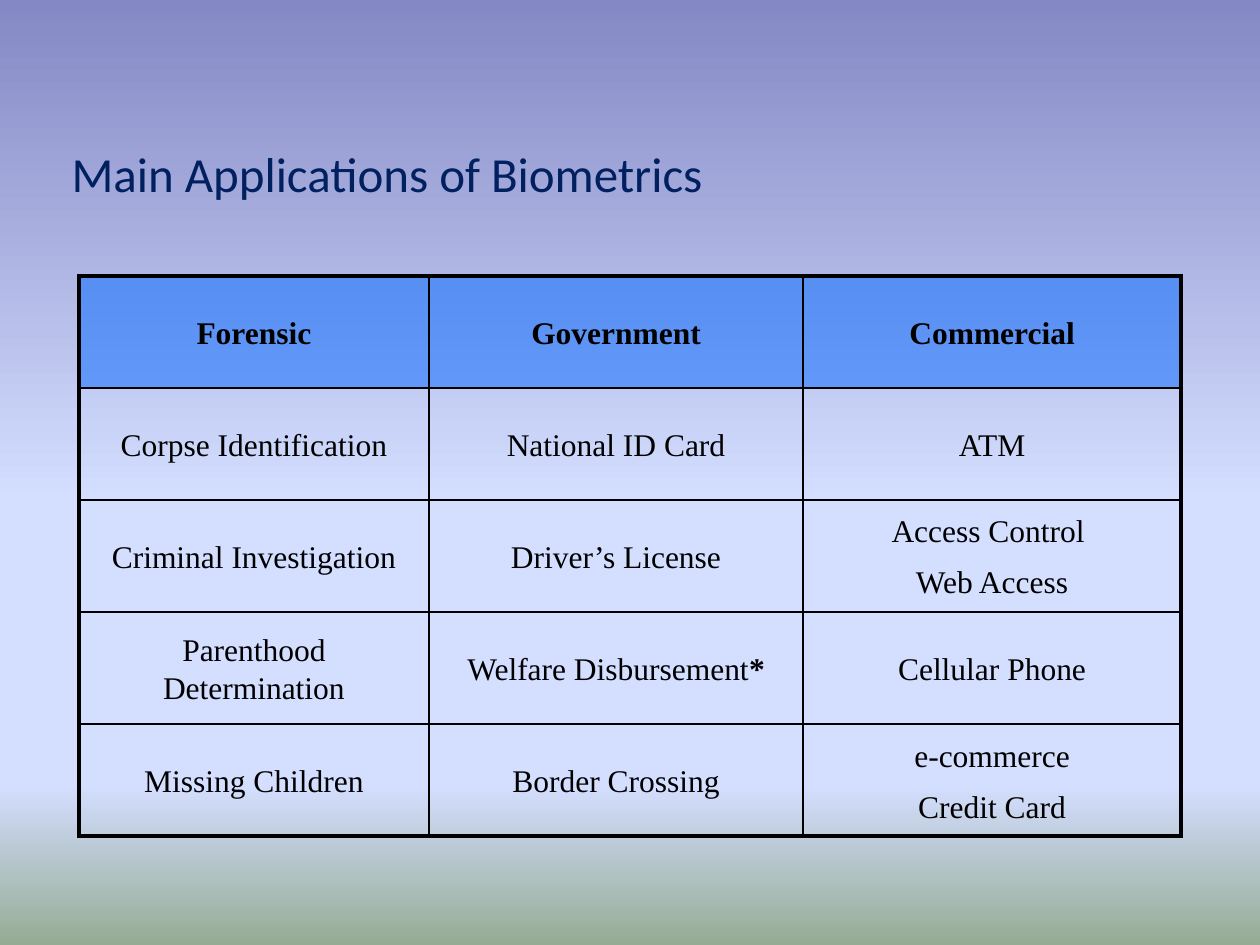
"""Build a slide with a table of the main applications of biometrics."""
from copy import deepcopy
from dataclasses import dataclass

from lxml.etree import SubElement
from pptx import Presentation
from pptx.dml.color import RGBColor
from pptx.enum.text import MSO_ANCHOR as Anchor, MSO_AUTO_SIZE as AutoSize, PP_ALIGN as Align
from pptx.oxml import parse_xml
from pptx.oxml.ns import nsdecls, qn
from pptx.util import Cm, Pt


@dataclass(frozen=True)
class Run:
    text: str
    bold: bool = False


@dataclass(frozen=True)
class Entry:
    paragraphs: tuple[tuple[Run, ...], ...]
    header: bool = False


def entry(*lines: str) -> Entry:
    return Entry(tuple((Run(line),) for line in lines))


def header(text: str) -> Entry:
    return Entry(((Run(text, True),),), True)


ROWS = [
    [header("Forensic"), header("Government"), header("Commercial")],
    [entry("Corpse Identification"), entry("National ID Card"), entry("ATM")],
    [entry("Criminal Investigation"), entry("Driver’s License"),
     entry("Access Control ", "Web Access")],
    [entry("Parenthood Determination"),
     Entry(((Run("Welfare Disbursement"), Run("*", True)),)), entry("Cellular Phone")],
    [entry("Missing Children"), entry("Border Crossing"), entry("e-commerce", "Credit Card")],
]
COL_WIDTHS = [7.06, 7.54, 7.62]
ROW_HEIGHT = 2.26
BACKGROUND = [(0, "8488C4"), (0.53, "D4DEFF"), (0.83, "D4DEFF"), (1, "96AB94")]
CELL_FORMAT = {"alignment": Align.CENTER, "line_spacing": 1.1, "space_before": Pt(7.2)}
CELL_FONT = {"name": "Times New Roman", "size": Pt(18)}
TITLE_FONT = {"name": "Calibri", "size": Pt(28), "bold": False}
TITLE_BOX = {"left": Cm(1.19), "top": Cm(2.54), "width": Cm(22.02), "height": Cm(1.9)}
TITLE_FRAME = {"vertical_anchor": Anchor.MIDDLE, "auto_size": AutoSize.NONE, "word_wrap": True}


def color(value: str) -> RGBColor:
    return RGBColor.from_string(value)


def apply(target: object, values: dict) -> None:
    for name, value in values.items():
        setattr(target, name, value)


def paint_background(s) -> None:
    fill = s.background.fill
    fill.gradient()
    fill.gradient_angle = 270
    stops = s.background._cSld.find(".//" + qn("a:gsLst"))
    for _ in range(len(BACKGROUND) - len(stops)):
        stops.append(deepcopy(stops[0]))
    for stop, (position, value) in zip(fill.gradient_stops, BACKGROUND):
        stop.position = position
        stop.color.rgb = color(value)


def add_title(s, text: str) -> None:
    sp = s.shapes.title
    apply(sp, TITLE_BOX)
    tf = sp.text_frame
    apply(tf, TITLE_FRAME)
    p = tf.paragraphs[0]
    p.alignment = Align.LEFT
    r = p.add_run()
    r.text = text
    apply(r.font, TITLE_FONT)
    r.font.color.rgb = color("002060")
    r.font.fill._xPr.find(qn("a:solidFill")).addnext(parse_xml(
        f'<a:effectLst {nsdecls("a")}><a:outerShdw dist="38100" dir="2700000">'
        '<a:srgbClr val="EEECE1"/></a:outerShdw></a:effectLst>'))


def set_borders(cell, outer: dict[str, bool]) -> None:
    tc_pr = cell._tc.get_or_add_tcPr()
    for i, (side, is_outer) in enumerate(outer.items()):
        width = Pt(2.25 if is_outer else 1)
        tc_pr.insert(i, parse_xml(
            f'<a:ln{side} {nsdecls("a")} w="{width}"><a:solidFill>'
            f'<a:srgbClr val="000000"/></a:solidFill></a:ln{side}>'))


def fill_cell(cell, item: Entry) -> None:
    cell.vertical_anchor = Anchor.MIDDLE
    if item.header:
        cell.fill.solid()
        cell.fill.fore_color.rgb = color("0066FF")
        rgb = cell._tc.tcPr.find(".//" + qn("a:srgbClr"))
        SubElement(rgb, qn("a:alpha")).set("val", "50000")
    else:
        cell.fill.background()
    tf = cell.text_frame
    for i, runs in enumerate(item.paragraphs):
        p = tf.add_paragraph() if i else tf.paragraphs[0]
        apply(p, CELL_FORMAT)
        for run in runs:
            r = p.add_run()
            r.text = run.text
            apply(r.font, CELL_FONT | {"bold": run.bold})
            r.font.color.rgb = color("000000")


def add_applications(s) -> None:
    n_rows, n_cols = len(ROWS), len(COL_WIDTHS)
    table = s.shapes.add_table(n_rows, n_cols, Cm(1.59), Cm(5.56),
                               Cm(sum(COL_WIDTHS)), Cm(ROW_HEIGHT * n_rows)).table
    apply(table, {"first_row": False, "horz_banding": False})
    for column, width in zip(table.columns, COL_WIDTHS):
        column.width = Cm(width)
    for i, row in enumerate(ROWS):
        table.rows[i].height = Cm(ROW_HEIGHT)
        for j, item in enumerate(row):
            cell = table.cell(i, j)
            fill_cell(cell, item)
            set_borders(cell, {"L": j == 0, "R": j == n_cols - 1,
                               "T": i == 0, "B": i == n_rows - 1})


def main() -> None:
    prs = Presentation()
    apply(prs, {"slide_width": Cm(25.4), "slide_height": Cm(19.05)})
    s = prs.slides.add_slide(prs.slide_layouts[5])
    paint_background(s)
    add_title(s, "Main Applications of Biometrics")
    add_applications(s)
    prs.save("out.pptx")


if __name__ == "__main__":
    main()
